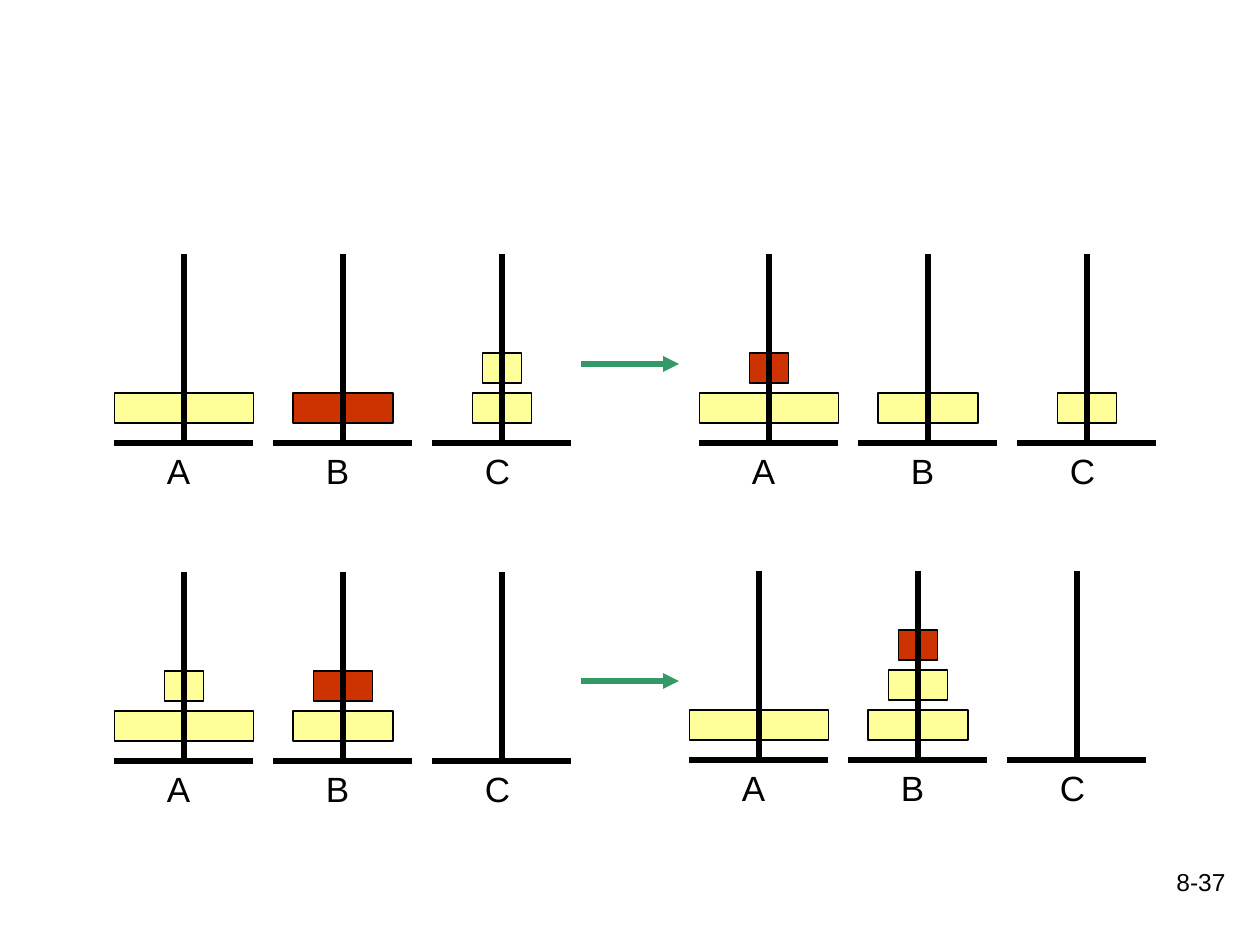
"""Build a slide showing two Tower of Hanoi moves as before and after states."""
from pptx import Presentation, util as u
from pptx.dml.color import RGBColor
from pptx.enum import shapes, text
from pptx.oxml.ns import qn
from lxml import etree

BLACK = RGBColor(0x00, 0x00, 0x00)
YELLOW = RGBColor(0xFF, 0xFF, 0x99)
RED = RGBColor(0xCC, 0x33, 0x00)
GREEN = RGBColor(0x33, 0x99, 0x66)

PEG_GAP, PEG_H, BASE_W = 159, 189, 139
DISK_H, DISK_STEP, DISK_LIFT = 30, 40, 50
LABEL_W, LABEL_H = 59, 54
DISK_W = {1: 39, 2: 59, 3: 100, 4: 139}


def px(n):
    return u.Inches(n / 126)


class Board:
    def __init__(self, prs):
        self.s = prs.slides.add_slide(prs.slide_layouts[6])
        self.font = {"name": "Arial"}

    def text(self, value, x, y, w, h, size, align=text.PP_ALIGN.LEFT,
             fit=text.MSO_AUTO_SIZE.NONE):
        tf = self.s.shapes.add_textbox(px(x), px(y), px(w), px(h)).text_frame
        tf.word_wrap = True
        tf.auto_size = fit
        p = tf.paragraphs[0]
        p.alignment = align
        r = p.add_run()
        r.text = value
        for key, val in {**self.font, "size": u.Pt(size)}.items():
            setattr(r.font, key, val)
        r.font.color.rgb = BLACK

    def line(self, x1, y1, x2, y2, color=BLACK, arrow=False):
        c = self.s.shapes.add_connector(
            shapes.MSO_CONNECTOR.STRAIGHT, px(x1), px(y1), px(x2), px(y2))
        c.line.width = u.Pt(3)
        c.line.color.rgb = color
        if arrow:
            etree.SubElement(c.line._get_or_add_ln(), qn("a:tailEnd"), type="triangle")
        etree.SubElement(c._element.spPr, qn("a:effectLst"))

    def disk(self, center, y, size, color):
        w = DISK_W[size]
        sp = self.s.shapes.add_shape(
            shapes.MSO_SHAPE.RECTANGLE, px(center - w / 2), px(y), px(w), px(DISK_H))
        sp.shadow.inherit = False
        sp.fill.solid()
        sp.fill.fore_color.rgb = color
        sp.line.color.rgb = BLACK
        sp.line.width = u.Pt(0.75)

    def peg(self, name, center, base, disks, moved):
        for level, size in enumerate(disks):
            is_moved = moved and level == len(disks) - 1
            self.disk(center, base - DISK_LIFT - level * DISK_STEP, size,
                      RED if is_moved else YELLOW)
        self.line(center, base - PEG_H, center, base)
        self.line(center - BASE_W / 2, base, center + BASE_W / 2, base)
        self.text(name, center - LABEL_W / 2, base, LABEL_W, LABEL_H, 20,
                  fit=text.MSO_AUTO_SIZE.SHAPE_TO_FIT_TEXT)

    def state(self, x, base, moved, stacks):
        for i, (name, disks) in enumerate(zip("ABC", stacks)):
            self.peg(name, x + i * PEG_GAP, base, disks, name == moved)


def main():
    prs = Presentation()
    prs.slide_width, prs.slide_height = u.Inches(10), u.Inches(7.5)
    board = Board(prs)
    states = [
        (184, 443, "B", ([4], [3], [2, 1])),
        (769, 443, "A", ([4, 1], [3], [2])),
        (184, 761, "B", ([4, 1], [3, 2], [])),
        (759, 760, "B", ([4], [3, 2, 1], [])),
    ]
    for state in states:
        board.state(*state)
    for y in (364, 681):
        board.line(581, y, 679, y, GREEN, arrow=True)
    board.text("8-37", 976, 861, 262, 63, 14, text.PP_ALIGN.RIGHT)
    prs.save("out.pptx")


if __name__ == "__main__":
    main()
